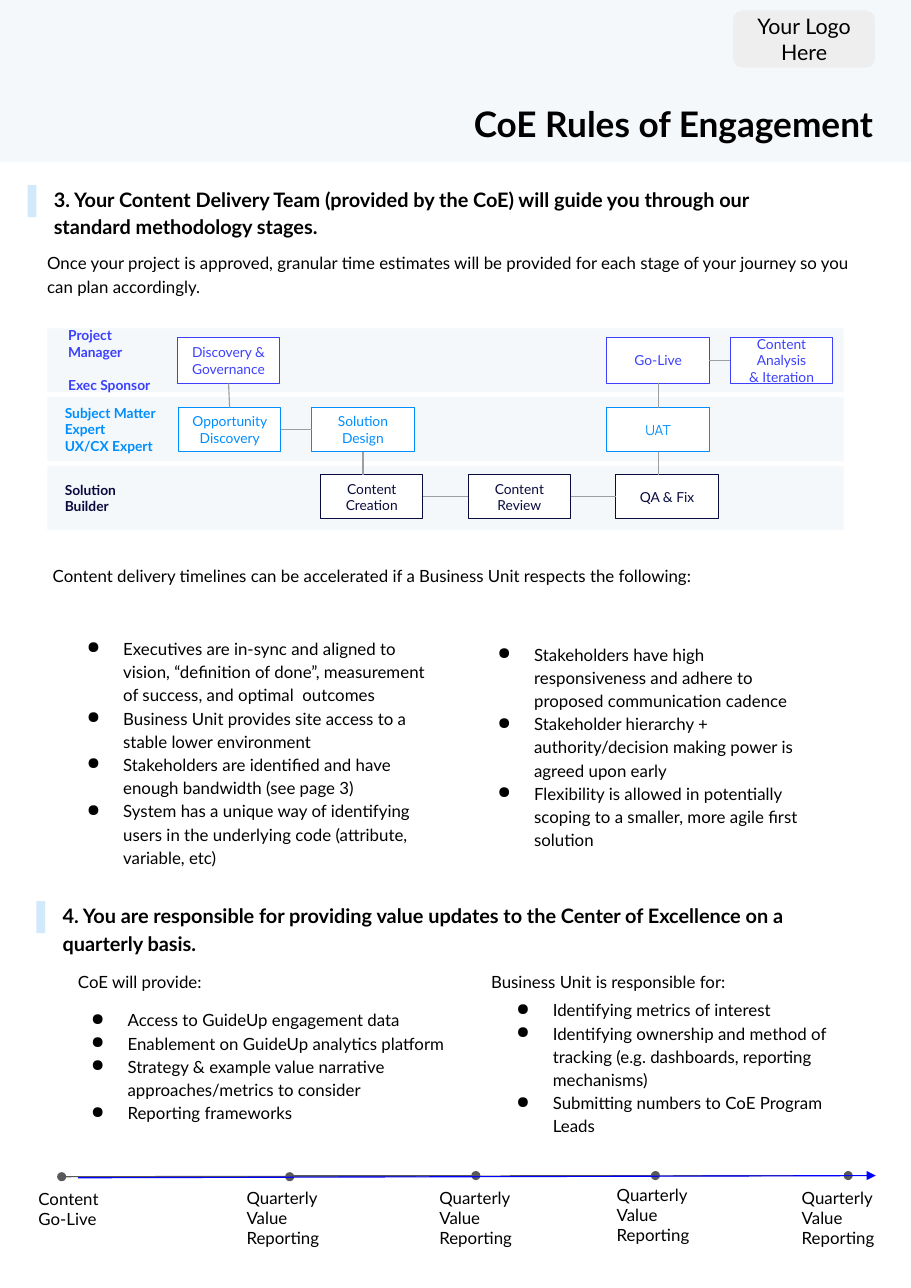
import pptx
import pptx.util
import pptx.dml.color
import pptx.enum.shapes
import pptx.enum.text
import pptx.oxml
import pptx.oxml.ns
from lxml import etree

Inches, Pt = pptx.util.Inches, pptx.util.Pt
SHAPE = pptx.enum.shapes.MSO_SHAPE
ALIGN = pptx.enum.text.PP_ALIGN
ANCHOR = pptx.enum.text.MSO_ANCHOR
qn = pptx.oxml.ns.qn

PALE, SKY, WHITE, BLACK = "F4F8FB", "D1E9FB", "FFFFFF", "000000"
INDIGO, AZURE, NAVY = "3C40FD", "008EFF", "090B3E"
GREY, DARK, BLUE = "9E9E9E", "595959", "0000FF"

TITLE = "CoE Rules of Engagement"
HEADS = [
    (0.25, 1.68, "3. Your Content Delivery Team (provided by the CoE) will guide you "
                 "through our standard methodology stages."),
    (0.33, 8.18, "4. You are responsible for providing value updates to the Center of "
                 "Excellence on a quarterly basis."),
]
PLAIN = [
    (0.33, 2.17, 7.66, 0.6, "Once your project is approved, granular time estimates will be "
                            "provided for each stage of your journey so you can plan accordingly."),
    (0.38, 5.01, 7.29, 0.6, "Content delivery timelines can be accelerated if a Business Unit "
                            "respects the following:"),
    (0.61, 8.69, 3.4, 0.39, "CoE will provide:"),
    (4.36, 8.69, 3.4, 0.39, "Business Unit is responsible for:"),
]
BULLETS = [
    (0.52, 5.67, 3.46, 2.3, [
        "Executives are in-sync and aligned to vision, “definition of done”, measurement of "
        "success, and optimal  outcomes",
        "Business Unit provides site access to a stable lower environment",
        "Stakeholders are identified and have enough bandwidth (see page 3)",
        "System has a unique way of identifying users in the underlying code (attribute, "
        "variable, etc)"]),
    (4.25, 5.72, 3.28, 2.09, [
        "Stakeholders have high responsiveness and adhere to proposed communication cadence",
        "Stakeholder hierarchy + authority/decision making power is agreed upon early",
        "Flexibility is allowed in potentially scoping to a smaller, more agile first solution"]),
    (0.56, 9.04, 3.69, 1.45, [
        "Access to GuideUp engagement data",
        "Enablement on GuideUp analytics platform",
        "Strategy & example value narrative approaches/metrics to consider",
        "Reporting frameworks"]),
    (4.42, 8.95, 3.28, 1.45, [
        "Identifying metrics of interest",
        "Identifying ownership and method of tracking (e.g. dashboards, reporting mechanisms)",
        "Submitting numbers to CoE Program Leads"]),
]
# lane: colour, label left, label width, label lines, gap, box top, box height, boxes
LANES = [
    (INDIGO, 0.52, 1.01, ["Project Manager", "Exec Sponsor"], 10.8, 3.06, 0.42,
     [(1.61, "Discovery & Governance"), (5.51, "Go-Live"),
      (6.63, "Content Analysis\n& Iteration")]),
    (AZURE, 0.49, 1.07, ["Subject Matter Expert", "UX/CX Expert"], 0, 3.7, 0.4,
     [(1.62, "Opportunity Discovery"), (2.83, "Solution Design"), (5.51, "UAT")]),
    (NAVY, 0.49, 1.07, ["Solution Builder"], 0, 4.31, 0.4,
     [(2.91, "Content Creation"), (4.25, "Content Review"), (5.59, "QA & Fix")]),
]
ACROSS = [("Go-Live", "Content Analysis\n& Iteration"),
          ("Opportunity Discovery", "Solution Design"),
          ("Content Creation", "Content Review"), ("Content Review", "QA & Fix")]
DOWN = [("Discovery & Governance", "Opportunity Discovery"), ("Go-Live", "UAT")]
DROPS = [("Solution Design", "Content Creation"), ("UAT", "QA & Fix")]

QUARTER = "Quarterly Value Reporting"
DATES = [(0.25, 10.69, "Content Go-Live"), (2.14, 10.68, QUARTER), (3.89, 10.68, QUARTER),
         (5.5, 10.65, QUARTER), (7.18, 10.68, QUARTER)]
SPANS = [
    ((0.56, 10.68), (7.7, 10.67), DARK, "oval", "oval"),
    ((0.61, 10.68), (2.63, 10.68), DARK, None, "oval"),
    ((2.61, 10.67), (4.32, 10.67), DARK, None, "oval"),
    ((4.63, 10.67), (5.95, 10.67), DARK, None, "oval"),
    ((0.71, 10.69), (7.95, 10.67), BLUE, None, "triangle"),
]


def rgb(code):
    return pptx.dml.color.RGBColor.from_string(code)


def write(shape, lines, size, color=BLACK, bold=False, font="Lato", align=ALIGN.LEFT,
          anchor=ANCHOR.TOP, space=1, gap=0, pad=0.1, dots=False):
    frame = shape.text_frame
    frame.word_wrap = True
    frame.auto_size = pptx.enum.text.MSO_AUTO_SIZE.NONE
    frame.vertical_anchor = anchor
    frame.margin_left = frame.margin_right = Inches(0.1)
    frame.margin_top = frame.margin_bottom = Inches(pad)
    for n, line in enumerate(lines):
        para = frame.add_paragraph() if n else frame.paragraphs[0]
        para.alignment, para.line_spacing = align, space
        para.space_before = Pt(gap if n else 0)
        for m, part in enumerate(line.split("\n")):
            if m:
                para.add_line_break()
            run = para.add_run()
            run.text = part
            run.font.name, run.font.size, run.font.bold = font, Pt(size), bold
            run.font.color.rgb = rgb(color)
        if dots:
            props = para._p.get_or_add_pPr()
            props.set("marL", str(Inches(0.5)))
            props.set("indent", str(Inches(-0.33)))
            tint = etree.SubElement(props, qn("a:buClr"))
            etree.SubElement(tint, qn("a:srgbClr")).set("val", BLACK)
            etree.SubElement(props, qn("a:buChar")).set("char", "●")


def block(x, y, w, h, fill, line=None, kind=SHAPE.RECTANGLE):
    shape = shapes.add_shape(kind, Inches(x), Inches(y), Inches(w), Inches(h))
    shape.shadow.inherit = False
    shape.fill.solid()
    shape.fill.fore_color.rgb = rgb(fill)
    if line:
        shape.line.color.rgb = rgb(line)
        shape.line.width = Pt(0.75)
    else:
        shape.line.fill.background()
    return shape


def label(x, y, w, h, lines, size, **style):
    write(shapes.add_textbox(Inches(x), Inches(y), Inches(w), Inches(h)), lines, size, **style)


def link(start, end, color=GREY, head=None, tail=None):
    """Draw a line; each end is an (x, y) point or a (shape, side) joint."""
    free = [p if isinstance(p[0], (int, float)) else (0, 0) for p in (start, end)]
    line = shapes.add_connector(pptx.enum.shapes.MSO_CONNECTOR.STRAIGHT,
                                *[Inches(v) for p in free for v in p])
    if free[0] != start:
        line.begin_connect(*start)
    if free[1] != end:
        line.end_connect(*end)
    line.line.color.rgb = rgb(color)
    line.line.width = Pt(0.75)
    props = line._element.spPr
    etree.SubElement(props, qn("a:effectLst"))
    for tag, kind in (("a:headEnd", head), ("a:tailEnd", tail)):
        if kind:
            etree.SubElement(props.find(qn("a:ln")), qn(tag)).set("type", kind)


deck = pptx.Presentation()
deck.slide_width, deck.slide_height = Inches(8.27), Inches(11.69)
slide = deck.slides.add_slide(deck.slide_layouts[5])
shapes = slide.shapes

# Banner and title
block(0, -0.07, 8.27, 1.54, PALE)
title = shapes.title
title.left, title.top, title.width, title.height = map(Inches, (2.49, 0.83, 5.54, 0.59))
write(title, [TITLE], 23, bold=True, align=ALIGN.RIGHT)
title.element.getparent().append(title.element)
logo = block(6.65, 0.09, 1.3, 0.53, "EEEEEE", PALE, SHAPE.ROUNDED_RECTANGLE)
write(logo, ["Your Logo Here"], 14, align=ALIGN.CENTER, anchor=ANCHOR.MIDDLE)

# Headings and body text
for x, y, text in HEADS:
    block(x, y, 0.08, 0.29, SKY)
    label(x + 0.14, y - 0.11, 7.08, 0.67, [text], 13, bold=True, space=1.15)
for x, y, w, h, text in PLAIN:
    label(x, y, w, h, [text], 11, space=1.15)
for x, y, w, h, lines in BULLETS:
    label(x, y, w, h, lines, 11, space=1.15, dots=True)

# Swim lanes
WIDE = 0.93
steps, spots = {}, {}
for n, (color, left, wide, names, gap, top, high, boxes) in enumerate(LANES):
    y = 2.98 + 0.625 * n
    block(0.43, y, 7.23, 0.58, PALE)
    label(left, y, wide, 0.58, names, 9, color=color, bold=True, anchor=ANCHOR.MIDDLE, gap=gap)
    for x, text in boxes:
        steps[text] = block(x, top, WIDE, high, WHITE, color)
        spots[text] = (x + WIDE / 2, top)
        write(steps[text], [text], 9, color=color, font="Manrope" if text == "UAT" else "Lato",
              align=ALIGN.CENTER, anchor=ANCHOR.MIDDLE, pad=0.05)
for a, b in ACROSS:
    link((steps[a], 3), (steps[b], 1))
for a, b in DOWN:
    link((steps[a], 2), (steps[b], 0))
for a, b in DROPS:
    link((steps[a], 2), (spots[a][0], spots[b][1]))

# Timeline
for span in SPANS:
    link(*span)
for x, y, text in DATES:
    label(x, y, WIDE, 0.76, [text], 11)

deck.save("out.pptx")
